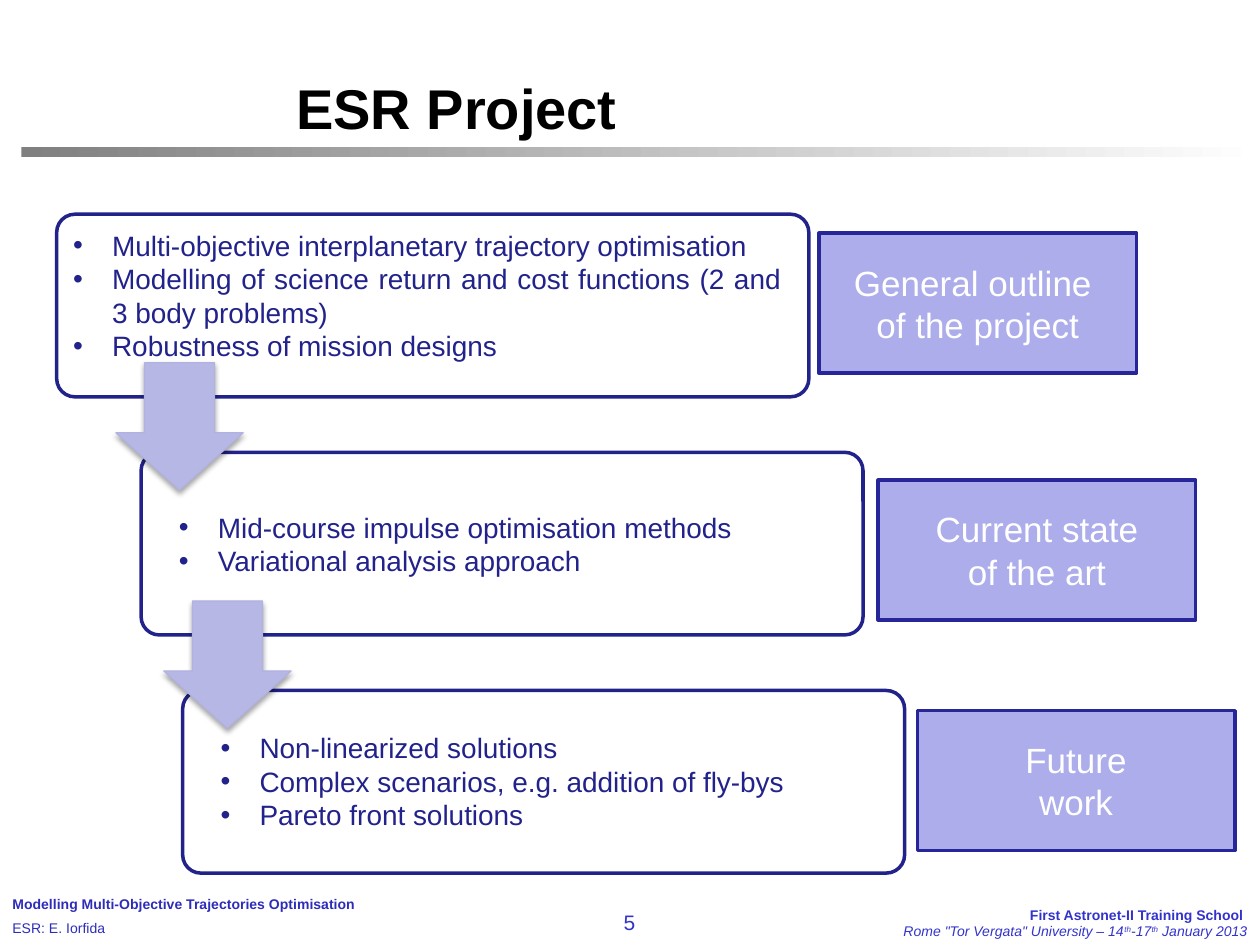
from dataclasses import dataclass

from lxml.etree import SubElement
from pptx import Presentation
from pptx.dml.color import RGBColor
from pptx.enum.shapes import MSO_SHAPE
from pptx.enum.text import MSO_ANCHOR, MSO_AUTO_SIZE, PP_ALIGN
from pptx.oxml.ns import qn
from pptx.util import Inches, Pt


@dataclass(frozen=True)
class Theme:
    face: str = "Arial"
    black: str = "000000"
    white: str = "FFFFFF"
    grey: str = "808080"
    navy: str = "22228B"
    edge: str = "262699"
    label: str = "ADADEB"
    arrow: str = "B7B7E5"
    rim: str = "B2B2E1"
    foot: str = "2D2DB9"
    blue: str = "3333CC"
    title: int = 32
    head: int = 20
    body: int = 16
    page: int = 12
    small: int = 8


THEME = Theme()
WIDE, HIGH = Inches(10), Inches(7.5)
TOP, STEP = 22.67, 25.2  # first card and distance between cards

# card left, card width, list left, list width, list drop,
# label left, label drop, label lines, list items
STAGES = [
    (4.5, 59.7, 5.2, 57.4, 0.67, 65, 2, ["General outline ", "of the project"],
     ["Multi-objective interplanetary trajectory optimisation",
      "Modelling of science return and cost functions (2 and 3 body problems)",
      "Robustness of mission designs"]),
    (11.2, 57.3, 13.6, 55.1, 5.33, 69.7, 2.93, ["Current state", "of the art"],
     ["Mid-course impulse optimisation methods", "Variational analysis approach"]),
    (14.5, 57.3, 16.9, 55.1, 3.47, 72.8, 2.13, ["Future", "work"],
     ["Non-linearized solutions", "Complex scenarios, e.g. addition of fly-bys",
      "Pareto front solutions"]),
]
ARROWS = [9.2, 13]


def area(x, y, w, h):
    """Turn percentages of the slide into left, top, width and height."""
    return [int(WIDE * x / 100), int(HIGH * y / 100),
            int(WIDE * w / 100), int(HIGH * h / 100)]


def apply(thing, values):
    for name, value in values.items():
        setattr(thing, name, value)


def move(shape, box):
    apply(shape, dict(zip(("left", "top", "width", "height"), area(*box))))


def style(font, size, color, **more):
    apply(font, {"name": THEME.face, "size": Pt(size), "bold": False, **more})
    font.color.rgb = RGBColor.from_string(color)


def write(frame, lines, size, color, align=PP_ALIGN.LEFT):
    """Fill a frame with one paragraph per line."""
    apply(frame, {"word_wrap": True, "auto_size": MSO_AUTO_SIZE.NONE})
    frame.text = "\n".join(lines)
    for para in frame.paragraphs:
        para.alignment = align
        for run in para.runs:
            style(run.font, size, color)
    return frame.paragraphs


def note(slide, box, lines, size, color, align=PP_ALIGN.LEFT):
    frame = slide.shapes.add_textbox(*area(*box)).text_frame
    return write(frame, lines, size, color, align)


def block(slide, kind, box, fill, line=None, width=2, adj=()):
    shape = slide.shapes.add_shape(kind, *area(*box))
    shape.shadow.inherit = False
    shape.fill.solid()
    shape.fill.fore_color.rgb = RGBColor.from_string(fill)
    if line:
        shape.line.color.rgb = RGBColor.from_string(line)
        shape.line.width = Pt(width)
    else:
        shape.line.fill.background()
    for i, value in enumerate(adj):
        shape.adjustments[i] = value
    return shape


def bullets(slide, body, box, items):
    """Fill a body placeholder and bring it in front of its card."""
    move(body, box)
    slide.shapes._spTree.append(body._element)
    frame = body.text_frame
    sides = ("margin_left", "margin_top", "margin_right", "margin_bottom")
    apply(frame, dict.fromkeys(sides, Inches(0.06)))
    frame.vertical_anchor = MSO_ANCHOR.TOP
    for para in write(frame, items, THEME.body, THEME.navy, PP_ALIGN.JUSTIFY):
        para.space_before = Pt(0)
        props = para._p.get_or_add_pPr()
        props.set("marL", str(Inches(0.31)))
        props.set("indent", str(-Inches(0.31)))
        SubElement(props, qn("a:buFont")).set("typeface", THEME.face)
        SubElement(props, qn("a:buChar")).set("char", "•")


def stage(slide, body, row, data):
    left, wide, inset, span, drop, side, fall, label, items = data
    top = TOP + row * STEP
    block(slide, MSO_SHAPE.ROUNDED_RECTANGLE, (left, top, wide, 19.33),
          THEME.white, THEME.navy, adj=[0.1])
    bullets(slide, body, (inset, top + drop, span, 12.13), items)
    tag = block(slide, MSO_SHAPE.RECTANGLE, (side, top + fall, 25.2, 14.8),
                THEME.label, THEME.edge)
    write(tag.text_frame, label, THEME.head, THEME.white, PP_ALIGN.CENTER)
    tag.text_frame.vertical_anchor = MSO_ANCHOR.MIDDLE


def arrow(slide, row, left):
    top = TOP + row * STEP + 15.73
    shape = block(slide, MSO_SHAPE.DOWN_ARROW, (left, top, 10.1, 13.47),
                  THEME.arrow, THEME.rim, 0.75, [0.55, 0.45])
    effects = shape._element.spPr.find(qn("a:effectLst"))
    shade = SubElement(effects, qn("a:outerShdw"), blurRad=str(Pt(3.1)),
                       dist=str(Pt(1.8)), dir="5400000", rotWithShape="0")
    tint = SubElement(shade, qn("a:srgbClr"), val=THEME.black)
    SubElement(tint, qn("a:alpha"), val="35000")


def header(slide):
    bar = block(slide, MSO_SHAPE.RECTANGLE, (1.7, 15.6, 98.3, 1.07), THEME.grey)
    bar.fill.gradient()
    bar.fill.gradient_angle = 0
    for stop, color in zip(bar.fill.gradient_stops, (THEME.grey, THEME.white)):
        stop.color.rgb = RGBColor.from_string(color)
    title = slide.shapes.title
    move(title, (22.5, 0, 73.3, 15.6))
    title.text_frame.vertical_anchor = MSO_ANCHOR.BOTTOM
    para = write(title.text_frame, ["ESR Project"], THEME.title, THEME.black)[0]
    para.runs[0].font.bold = True


def footer(slide):
    note(slide, (40.8, 95.6, 18.3, 4.4), ["5"], THEME.page, THEME.blue,
         PP_ALIGN.CENTER)
    topic, author = note(
        slide, (0, 94.13, 38.3, 5.87),
        ["Modelling Multi-Objective Trajectories Optimisation", "ESR: E. Iorfida"],
        THEME.small, THEME.foot)
    topic.runs[0].font.bold = True
    author.space_before = Pt(4)
    event, place = note(slide, (61.7, 93.47, 38.3, 5.87),
                        ["First Astronet-II Training School ", ""],
                        THEME.small, THEME.blue, PP_ALIGN.RIGHT)
    event.line_spacing = 2.0
    event.runs[0].font.bold = True
    parts = ['Rome "Tor Vergata" University – 14', "th", "-17", "th",
             " January 2013"]
    for part in parts:
        run = place.add_run()
        run.text = part
        style(run.font, THEME.small, THEME.blue, italic=True)
        if part == "th":
            run.font._element.set("baseline", "30000")


def main():
    deck = Presentation()
    apply(deck, {"slide_width": WIDE, "slide_height": HIGH})
    slide = deck.slides.add_slide(deck.slide_layouts.get_by_name("Comparison"))
    *bodies, spare = list(slide.placeholders)[1:]
    spare._element.getparent().remove(spare._element)
    header(slide)
    for row, (body, data) in enumerate(zip(bodies, STAGES)):
        stage(slide, body, row, data)
    for row, left in enumerate(ARROWS):
        arrow(slide, row, left)
    footer(slide)
    deck.save("out.pptx")


if __name__ == "__main__":
    main()
